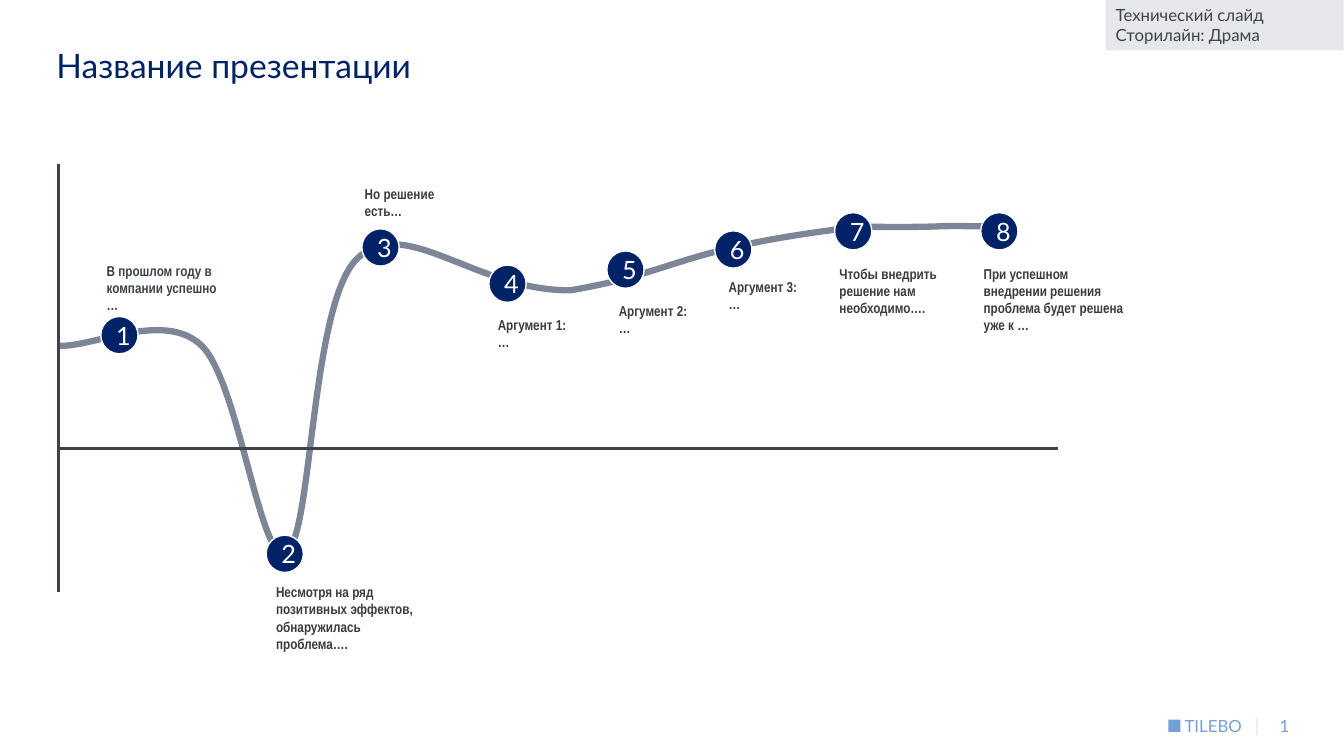
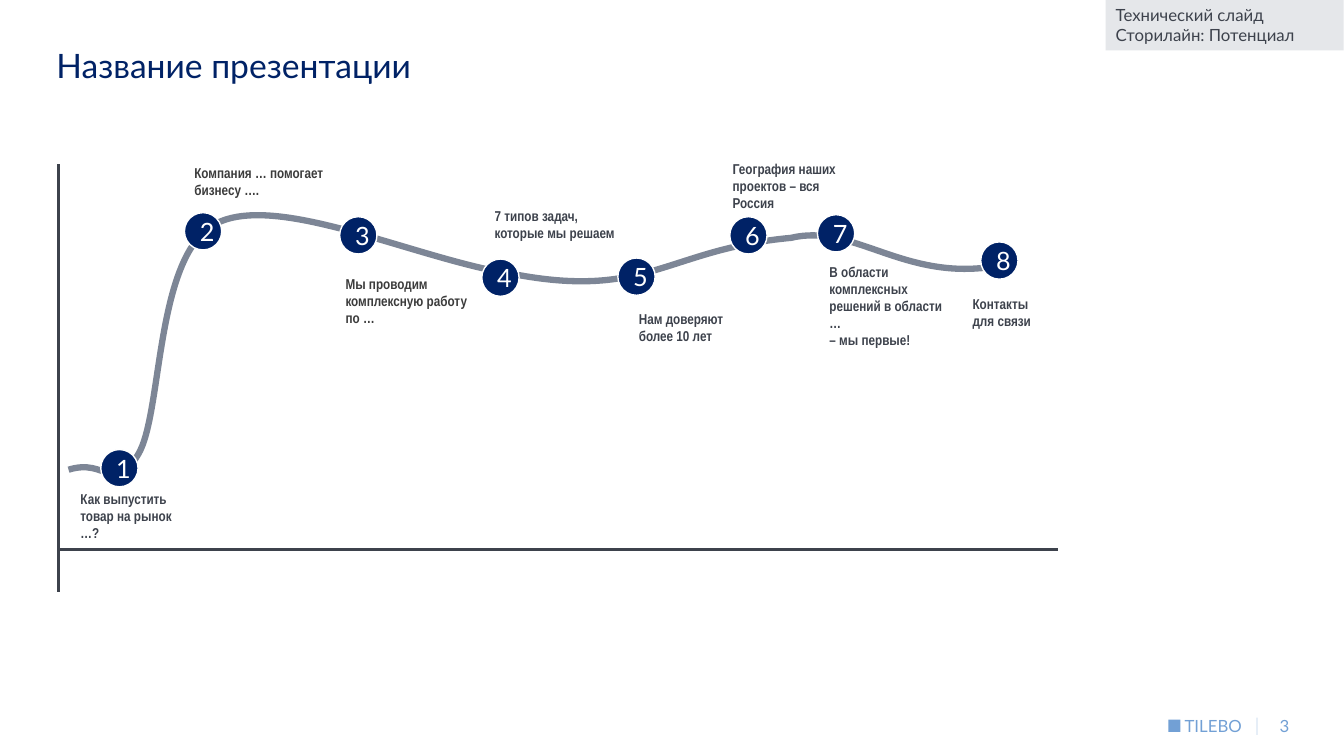
"""Builds two storyline slides: a curve over two axes with numbered stages."""
import dataclasses

import lxml.etree
import pptx
import pptx.dml.color
import pptx.enum.shapes
import pptx.enum.text
import pptx.oxml.ns
import pptx.util

Inches = pptx.util.Inches
Pt = pptx.util.Pt
qualified = pptx.oxml.ns.qn
SHAPES = pptx.enum.shapes.MSO_SHAPE
ALIGN = pptx.enum.text.PP_ALIGN
ANCHOR = pptx.enum.text.MSO_ANCHOR


@dataclasses.dataclass(frozen=True)
class Theme:
    navy: str = "002266"
    sky: str = "72A0D5"
    slate: str = "3D424C"
    charcoal: str = "3C3C3C"
    curve: str = "7D8696"
    badge: str = "E5E7EA"
    white: str = "FFFFFF"
    main_font: str = "Lato"
    label_font: str = "Arial Narrow"
    title_size: float = 24
    marker_size: float = 18
    small_size: float = 12
    label_size: float = 10.2


THEME = Theme()
TITLE = "Название презентации"
BRAND = "TILEBO"
SLIDE_HEIGHT = 7.5
SLIDE_WIDTH = SLIDE_HEIGHT * 16 / 9
MARKER_DIAMETER = 0.37
AXIS_LEFT, AXIS_RIGHT = 0.58, 10.5
AXIS_TOP, AXIS_BOTTOM = 1.63, 5.87
BOUND_STEPS = 24
LABEL_INSETS = (0.1, 0.05, 0, 0.05)

STORYLINES = [
    {
        "number": "1",
        "badge": "Технический слайд\nСторилайн: Драма",
        "baseline": 4.45,
        "start": (0.59, 3.43),
        "curves": [
            ((0.91, 3.45), (1.62, 3.08), (1.99, 3.42)),
            ((2.37, 3.76), (2.58, 5.63), (2.84, 5.48)),
            ((3.1, 5.34), (3.08, 2.99), (3.55, 2.56)),
            ((4.02, 2.12), (4.72, 2.89), (5.66, 2.88)),
            ((6.73, 2.7), (6.73, 2.46), (8.52, 2.25)),
            ((9.6, 2.26), (9.08, 2.23), (9.88, 2.25)),
        ],
        "stages": [
            ((1, 3.14), (0.96, 2.55, 1.29, 1.02),
             [("В ", THEME.charcoal), ("прошлом году в компании успешно …", THEME.slate)]),
            ((2.64, 5.31), (2.64, 5.74, 1.65, 1.02),
             [("Несмотря на ряд позитивных эффектов, обнаружилась проблема….", THEME.charcoal)]),
            ((3.59, 2.27), (3.52, 1.79, 1.57, 0.56),
             [("Но решение\nесть…", THEME.charcoal)]),
            ((4.85, 2.63), (4.84, 3.09, 0.98, 0.56),
             [("Аргумент 1:\n…", THEME.charcoal)]),
            ((6.02, 2.49), (6.04, 2.95, 0.98, 0.56),
             [("Аргумент 2:\n…", THEME.charcoal)]),
            ((7.09, 2.29), (7.13, 2.71, 0.98, 0.56),
             [("Аргумент 3:\n…", THEME.charcoal)]),
            ((8.28, 2.11), (8.23, 2.58, 1.1, 0.56),
             [("Чтобы внедрить решение нам необходимо….", THEME.charcoal)]),
            ((9.73, 2.11), (9.66, 2.58, 1.58, 0.56),
             [("При успешном внедрении решения проблема будет решена уже к …", THEME.charcoal)]),
        ],
    },
    {
        "number": "3",
        "badge": "Технический слайд\nСторилайн: Потенциал",
        "baseline": 5.45,
        "start": (0.68, 4.66),
        "curves": [
            ((1.06, 4.54), (1.12, 4.92), (1.37, 4.51)),
            ((1.62, 4.1), (1.53, 2.5), (2.16, 2.21)),
            ((2.79, 1.91), (4.19, 2.6), (5.15, 2.73)),
            ((6.43, 2.96), (6.64, 2.47), (7.85, 2.36)),
            ((8.47, 2.21), (8.97, 2.8), (9.89, 2.64)),
        ],
        "stages": [
            ((1, 4.46), (0.7, 4.81, 1.29, 0.45),
             [("Как выпустить товар на рынок\n…?", THEME.slate)]),
            ((1.83, 2.11), (1.83, 1.58, 1.63, 0.55),
             [("Компания … помогает бизнесу ….", THEME.charcoal)]),
            ((3.37, 2.15), (3.33, 2.68, 1.43, 0.56),
             [("Мы проводим комплексную работу по …", THEME.charcoal)]),
            ((4.78, 2.57), (4.81, 2.01, 1.43, 0.56),
             [("7 типов задач, которые мы решаем", THEME.slate)]),
            ((6.13, 2.56), (6.24, 3.03, 1.06, 0.5),
             [("Нам доверяют более 10 лет", THEME.slate)]),
            ((7.24, 2.15), (7.17, 1.54, 1.31, 0.5),
             [("География наших проектов – вся Россия", THEME.slate)]),
            ((8.11, 2.13), (8.13, 2.56, 1.31, 0.5),
             [("В области комплексных решений в области …\n– мы первые!", THEME.slate)]),
            ((9.73, 2.4), (9.55, 2.88, 0.75, 0.5),
             [("Контакты для связи", THEME.slate)]),
        ],
    },
]


def rgb(colour):
    return pptx.dml.color.RGBColor.from_string(colour)


def write_runs(shape, runs, size, font=THEME.main_font, bold=False, align=ALIGN.LEFT):
    paragraph = shape.text_frame.paragraphs[0]
    paragraph.alignment = align
    for text, colour in runs:
        for index, line in enumerate(text.split("\n")):
            if index:
                paragraph.add_line_break()
            run = paragraph.add_run()
            run.text = line
            run.font.name = font
            run.font.size = Pt(size)
            run.font.bold = bold
            run.font.color.rgb = rgb(colour)


def add_text(slide, box, runs, size, insets=(0, 0, 0, 0), **style):
    shape = slide.shapes.add_textbox(*map(Inches, box))
    frame = shape.text_frame
    frame.word_wrap = True
    (frame.margin_left, frame.margin_top,
     frame.margin_right, frame.margin_bottom) = map(Inches, insets)
    write_runs(shape, runs, size, **style)


def add_block(slide, kind, box, fill, outline=None):
    shape = slide.shapes.add_shape(kind, *map(Inches, box))
    shape.shadow.inherit = False
    shape.fill.solid()
    shape.fill.fore_color.rgb = rgb(fill)
    if outline:
        shape.line.color.rgb = rgb(outline)
        shape.line.width = Pt(1)
    else:
        shape.line.fill.background()
    return shape


def add_line(slide, start, end, colour, width, opacity=100):
    line = slide.shapes.add_connector(
        pptx.enum.shapes.MSO_CONNECTOR.STRAIGHT, *map(Inches, start + end))
    line.line.color.rgb = rgb(colour)
    line.line.width = Pt(width)
    properties = line._element.spPr
    if opacity < 100:
        solid = properties.find(".//" + qualified("a:srgbClr"))
        alpha = lxml.etree.SubElement(solid, qualified("a:alpha"))
        alpha.set("val", str(opacity * 1000))
    lxml.etree.SubElement(properties, qualified("a:effectLst"))


def bezier_points(start, curves):
    points = []
    for first, second, end in curves:
        for step in range(1, BOUND_STEPS + 1):
            t = step / BOUND_STEPS
            weights = ((1 - t) ** 3, 3 * t * (1 - t) ** 2, 3 * t ** 2 * (1 - t), t ** 3)
            points.append(tuple(
                sum(weight * value for weight, value in zip(weights, values))
                for values in zip(start, first, second, end)))
        start = end
    return points


def add_curve(slide, start, curves):
    builder = slide.shapes.build_freeform(*map(Inches, start))
    builder.add_line_segments(
        [tuple(map(Inches, point)) for point in bezier_points(start, curves)], close=False)
    shape = builder.convert_to_shape()
    outline = shape._element.spPr.find(".//" + qualified("a:path"))
    for segment in outline.findall(qualified("a:lnTo")):
        outline.remove(segment)
    for curve in curves:
        segment = lxml.etree.SubElement(outline, qualified("a:cubicBezTo"))
        for x, y in curve:
            point = lxml.etree.SubElement(segment, qualified("a:pt"))
            point.set("x", str(Inches(x) - shape.left))
            point.set("y", str(Inches(y) - shape.top))
    shape.shadow.inherit = False
    shape.fill.background()
    shape.line.color.rgb = rgb(THEME.curve)
    shape.line.width = Pt(4.5)


def add_frame(slide, badge_text, number):
    add_block(slide, SHAPES.RECTANGLE, (11.59, 7.14, 0.12, 0.12), THEME.sky)
    for left, text in ((11.6, BRAND), (12.07, number)):
        add_text(slide, (left, 7.1, 0.72, 0.18), [(text, THEME.sky)],
                 THEME.small_size, align=ALIGN.RIGHT)
    add_line(slide, (12.47, 7.12), (12.47, 7.29), THEME.sky, 0.5, opacity=50)
    add_text(slide, (0.56, 0.4, 12.21, 0.59), [(TITLE, THEME.navy)],
             THEME.title_size, insets=(0, 0.05, 0.1, 0.05))
    badge = add_block(slide, SHAPES.RECTANGLE, (10.97, 0, 2.36, 0.5), THEME.badge)
    badge.text_frame.vertical_anchor = ANCHOR.TOP
    badge.text_frame.auto_size = pptx.enum.text.MSO_AUTO_SIZE.SHAPE_TO_FIT_TEXT
    write_runs(badge, [(badge_text, THEME.slate)], THEME.small_size)


def add_stage(slide, number, marker, label_box, runs):
    add_text(slide, label_box, runs, THEME.label_size, insets=LABEL_INSETS,
             font=THEME.label_font, bold=True)
    circle = add_block(slide, SHAPES.OVAL, marker + (MARKER_DIAMETER, MARKER_DIAMETER),
                       THEME.navy, THEME.white)
    circle.text_frame.vertical_anchor = ANCHOR.MIDDLE
    write_runs(circle, [(str(number), THEME.white)], THEME.marker_size, align=ALIGN.CENTER)


def main():
    presentation = pptx.Presentation()
    presentation.slide_width = Inches(SLIDE_WIDTH)
    presentation.slide_height = Inches(SLIDE_HEIGHT)
    for story in STORYLINES:
        slide = presentation.slides.add_slide(presentation.slide_layouts[6])
        add_frame(slide, story["badge"], story["number"])
        add_curve(slide, story["start"], story["curves"])
        baseline = story["baseline"]
        add_line(slide, (AXIS_LEFT, baseline), (AXIS_RIGHT, baseline), THEME.slate, 2)
        add_line(slide, (AXIS_LEFT, AXIS_BOTTOM), (AXIS_LEFT, AXIS_TOP), THEME.slate, 2)
        for number, stage in enumerate(story["stages"], 1):
            add_stage(slide, number, *stage)
    presentation.save("out.pptx")


if __name__ == "__main__":
    main()
